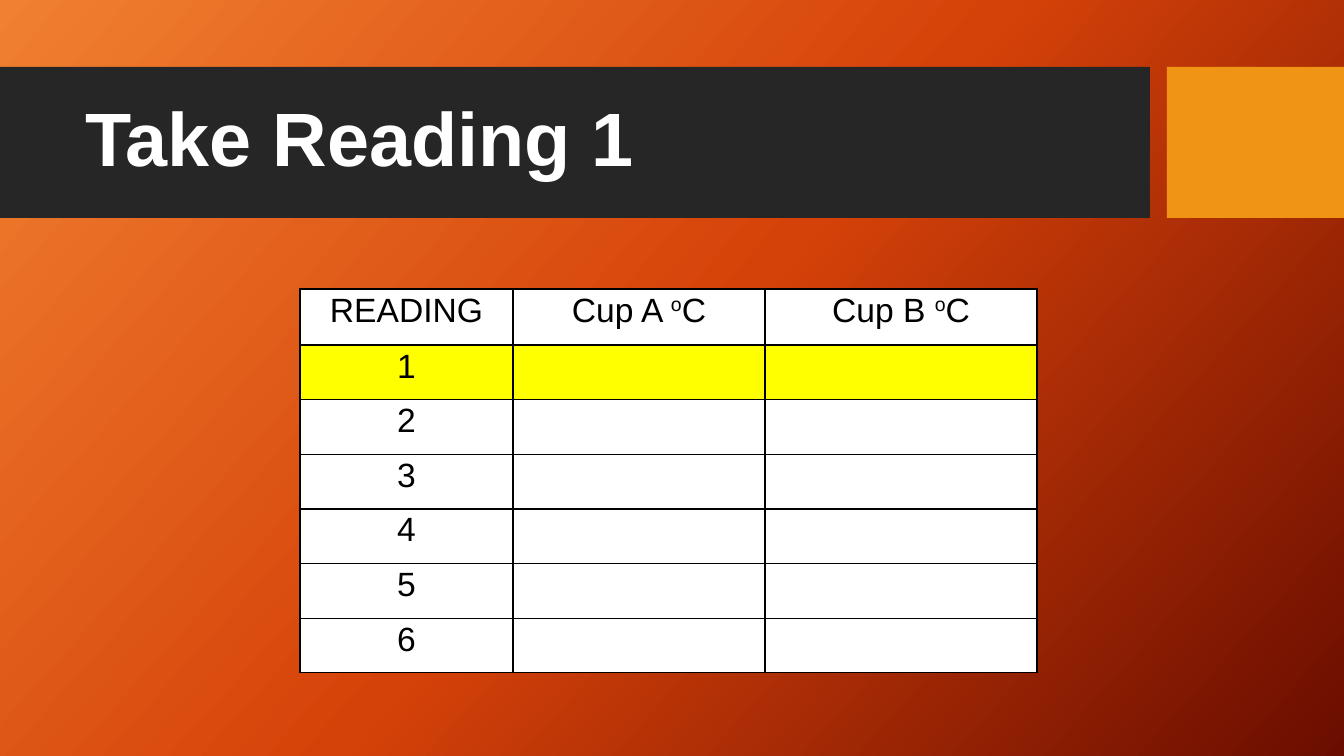
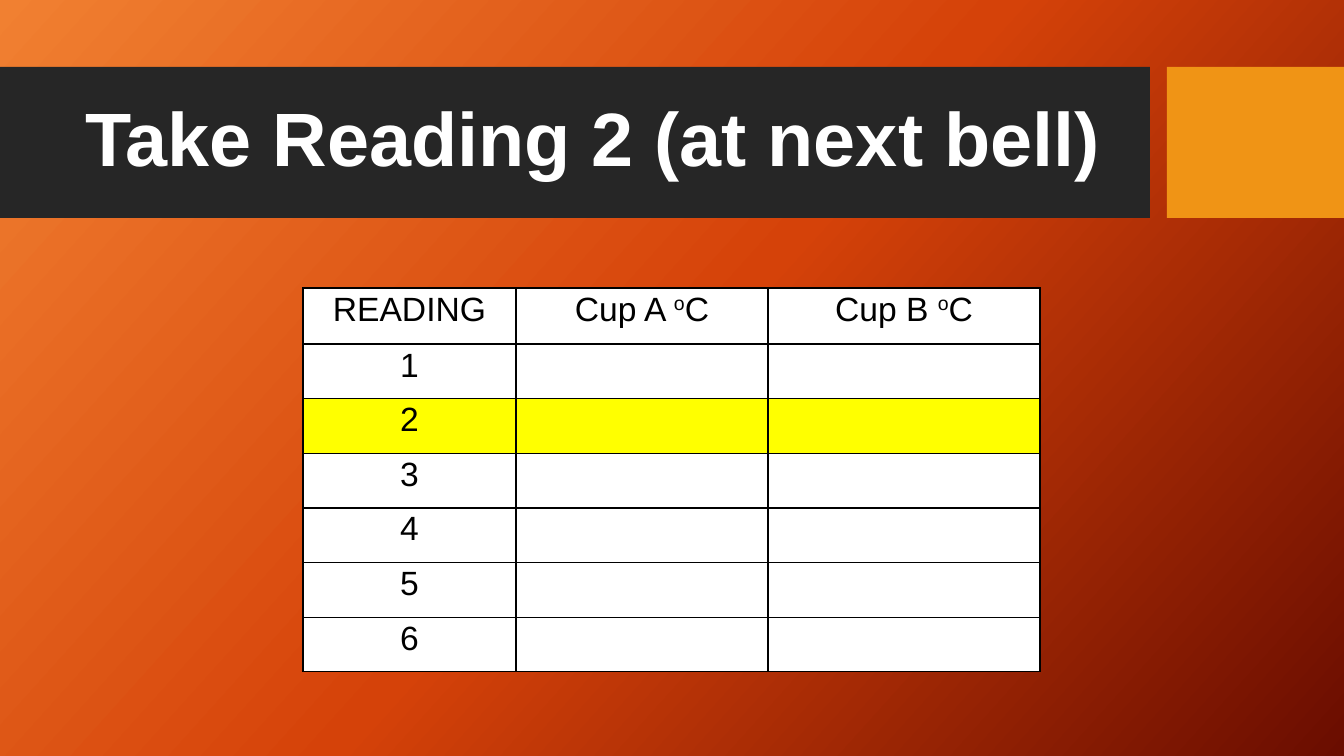
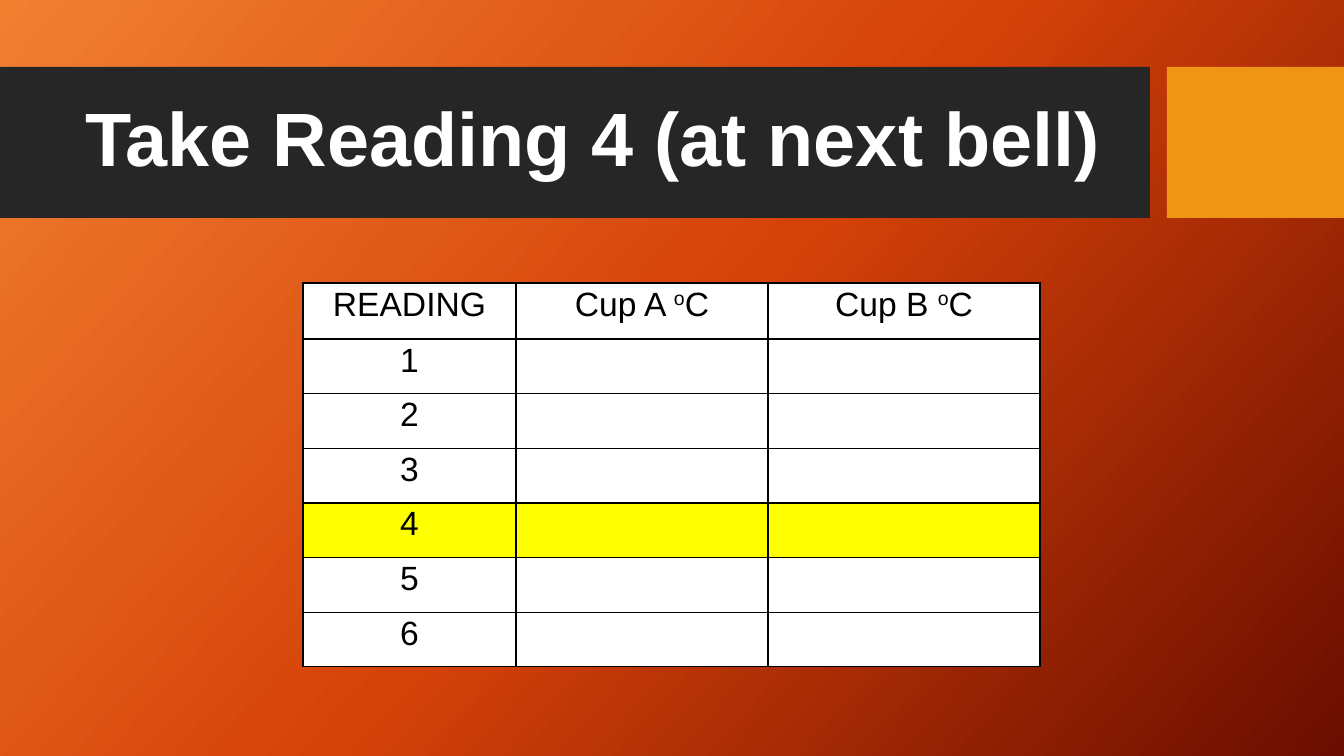
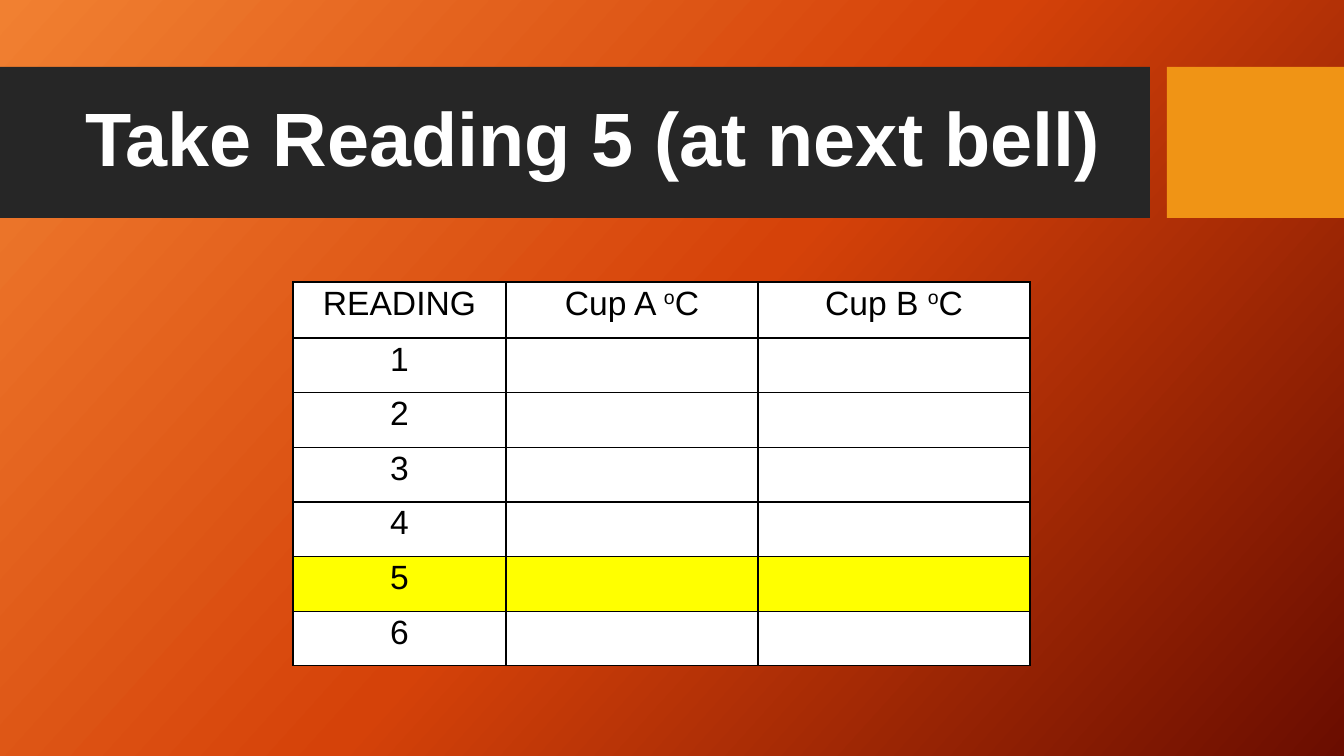
"""Build the slides that call for each temperature reading."""
from copy import deepcopy
from dataclasses import dataclass

from pptx import Presentation
from pptx.dml.color import RGBColor
from pptx.enum.shapes import MSO_SHAPE
from pptx.enum.text import MSO_ANCHOR, MSO_AUTO_SIZE, PP_ALIGN
from pptx.oxml import parse_xml
from pptx.oxml.ns import nsdecls, qn
from pptx.util import Emu, Pt

RECT = MSO_SHAPE.RECTANGLE
MIDDLE = MSO_ANCHOR.MIDDLE
FIXED = MSO_AUTO_SIZE.NONE
LEFT = PP_ALIGN.LEFT
CENTER = PP_ALIGN.CENTER
WIDE, HIGH = 1344, 756
SCALE = 12192000 / WIDE


@dataclass(frozen=True)
class Theme:
    """Colours, font and type sizes of the deck."""
    font: str = "Arial"
    head: int = 54
    cell: int = 24
    rule: int = 1
    angle: int = 318
    glow: tuple = ("F18031", "D54209", "6A0D00")
    band: str = "262626"
    block: str = "F09415"
    light: str = "FFFFFF"
    dark: str = "000000"
    mark: str = "FFFF00"


def emu(px):
    """Turn px into EMU."""
    return Emu(round(px * SCALE))


def paint(fill, color):
    """Set a solid fill."""
    fill.solid()
    fill.fore_color.rgb = RGBColor.from_string(color)


class Deck:
    """Hold the style and the current slide."""

    def __init__(self, theme):
        """Open a deck and set its size, ground and title place."""
        self.theme = theme
        self.prs = Presentation()
        self.prs.slide_width, self.prs.slide_height = emu(WIDE), emu(HIGH)
        self.layout = self.prs.slide_layouts[5]
        self.slide = None
        self.ground()
        title = self.layout.placeholders[0]
        title.left, title.top = emu(75), emu(83)
        title.width, title.height = emu(1059), emu(119)
        title.text_frame.vertical_anchor = MIDDLE
        title.text_frame.auto_size = FIXED

    def ground(self):
        """Give the layout a gradient of evenly spaced stops."""
        fill = self.layout.background.fill
        fill.gradient()
        fill.gradient_angle = self.theme.angle
        stops = self.layout.element.find(".//" + qn("a:gsLst"))
        stops.append(deepcopy(stops[-1]))
        last = len(self.theme.glow) - 1
        for i, color in enumerate(self.theme.glow):
            stop = fill.gradient_stops[i]
            stop.position = i / last
            stop.color.rgb = RGBColor.from_string(color)

    def page(self, text):
        """Start a slide with its title."""
        self.slide = self.prs.slides.add_slide(self.layout)
        para = self.slide.shapes.title.text_frame.paragraphs[0]
        para.alignment = LEFT
        para.line_spacing = 0.9
        self.run(para, text, self.theme.head, self.theme.light, bold=True)

    def run(self, para, text, size, color, bold=False, lift=False):
        """Add one run of text."""
        run = para.add_run()
        run.text = text
        font = run.font
        font.name, font.size, font.bold = self.theme.font, Pt(size), bold
        font.color.rgb = RGBColor.from_string(color)
        if lift:
            run._r.get_or_add_rPr().set("baseline", "30000")

    def band(self, left, width, color):
        """Draw a band and move it to the back of the layout."""
        shape = self.slide.shapes.add_shape(
            RECT, emu(left), emu(67), emu(width), emu(151))
        shape.shadow.inherit = False
        paint(shape.fill, color)
        shape.line.fill.background()
        self.layout.shapes.element.insert(2, shape.element)

    def edge(self, cell):
        """Rule all four sides of a cell."""
        props = cell._tc.get_or_add_tcPr()
        for side in "LRTB":
            props.append(parse_xml(
                f'<a:ln{side} {nsdecls("a")} w="{Pt(self.theme.rule)}">'
                f'<a:solidFill><a:srgbClr val="{self.theme.dark}"/>'
                f'</a:solidFill></a:ln{side}>'))

    def cell(self, cell, runs, color):
        """Style a cell and write its runs, every second one raised."""
        self.edge(cell)
        paint(cell.fill, color)
        cell.margin_left = cell.margin_right = emu(7)
        cell.margin_top = cell.margin_bottom = 0
        para = cell.text_frame.paragraphs[0]
        para.alignment = CENTER
        para.line_spacing = 1.07
        for i, text in enumerate(runs):
            self.run(para, text, self.theme.cell, self.theme.dark,
                     lift=i % 2 == 1)

    def table(self, left, top, rows, cols, mark):
        """Add a table with one marked row."""
        high, first = 384, 56
        grid = self.slide.shapes.add_table(
            len(rows), len(cols), emu(left), emu(top),
            emu(sum(cols)), emu(high)).table
        grid.first_row = grid.horz_banding = False
        for col, width in zip(grid.columns, cols):
            col.width = emu(width)
        step = (high - first) / (len(rows) - 1)
        for r, row in enumerate(rows):
            grid.rows[r].height = emu(step if r else first)
            color = self.theme.mark if r == mark else self.theme.light
            for c, runs in enumerate(row):
                self.cell(grid.cell(r, c), runs, color)


def main():
    """Make one slide for each reading and save the deck."""
    theme = Theme()
    deck = Deck(theme)
    rows = [[["READING"], ["Cup A ", "o", "C"], ["Cup B ", "o", "C"]]]
    rows += [[[str(n)], [], []] for n in range(1, 7)]
    bell = " (at next bell)"
    pages = [(1, "", 300, 289), (2, bell, 303, 288),
             (4, bell, 303, 283), (5, bell, 293, 282)]
    for mark, tail, left, top in pages:
        deck.page(f"Take Reading {mark}{tail}")
        deck.table(left, top, rows, (213, 252, 272), mark)
    deck.band(0, 1150, theme.band)
    deck.band(1167, 177, theme.block)
    deck.prs.save("out.pptx")


if __name__ == "__main__":
    main()
